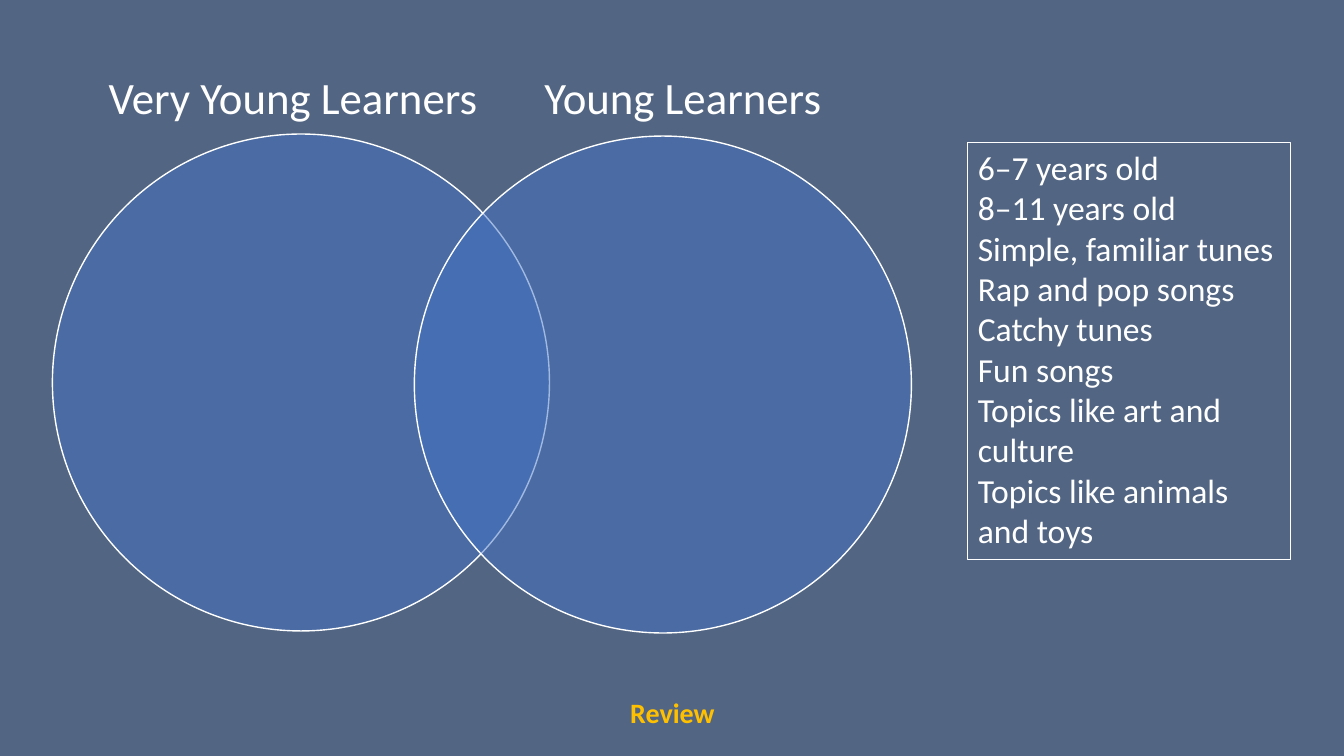
from lxml import etree
from pptx import Presentation
from pptx.dml.color import RGBColor
from pptx.enum.shapes import MSO_SHAPE
from pptx.enum.text import MSO_ANCHOR, PP_ALIGN
from pptx.oxml.ns import qn
from pptx.util import Inches, Pt

OVAL, LEFT = MSO_SHAPE.OVAL, PP_ALIGN.LEFT
TOP, MIDDLE = MSO_ANCHOR.TOP, MSO_ANCHOR.MIDDLE
SLATE = RGBColor(0x52, 0x65, 0x82)
BLUE = RGBColor(0x44, 0x72, 0xC4)
WHITE = RGBColor(0xFF, 0xFF, 0xFF)
GOLD = RGBColor(0xFF, 0xC0, 0x00)

# Content: places are left, top, width, height in inches
SECTION = ("Review", (6.15, 6.88, 1.13, 0.42))
LEARNER_GROUPS = [
    # heading, heading place, circle left and top
    ("Very Young Learners", (0.98, 0.64, 4.31, 0.64), (0.52, 1.33)),
    ("Young Learners", (5.3, 0.64, 3.11, 0.64), (4.11, 1.35)),
]
CIRCLE_SIZE = 4.93
FEATURES = [
    "6–7 years old",
    "8–11 years old",
    "Simple, familiar tunes",
    "Rap and pop songs",
    "Catchy tunes",
    "Fun songs",
    "Topics like art and culture",
    "Topics like animals and toys",
]
FEATURES_PLACE = (9.6, 1.41, 3.2, 4.14)

SECTION_FONT = {"name": "Calibri", "size": Pt(20), "bold": True}
HEADING_FONT = {"name": "Calibri", "size": Pt(32)}
FEATURE_FONT = {"name": "Calibri", "size": Pt(24)}


def inches(place):
    return [Inches(value) for value in place]


def write(box, lines, font_format, color, anchor=TOP, wrap=True, spacing=None):
    frame = box.text_frame
    frame.word_wrap = wrap
    frame.vertical_anchor = anchor
    frame.margin_left = frame.margin_right = Inches(0.1)
    frame.margin_top = frame.margin_bottom = Inches(0.05)
    frame.text = "\n".join(lines)
    for paragraph in frame.paragraphs:
        paragraph.alignment = LEFT
        paragraph.space_before = Pt(0)
        paragraph.line_spacing = spacing
        for key, value in font_format.items():
            setattr(paragraph.font, key, value)
        paragraph.font.color.rgb = color


def outline(shape, width):
    shape.line.color.rgb = WHITE
    shape.line.width = Pt(width)


deck = Presentation()
deck.slide_width, deck.slide_height = Inches(13.33), Inches(7.5)
slide = deck.slides.add_slide(deck.slide_layouts[5])
slide.background.fill.solid()
slide.background.fill.fore_color.rgb = SLATE

# Section label
section = slide.shapes.title
section.left, section.top, section.width, section.height = inches(SECTION[1])
write(section, [SECTION[0]], SECTION_FONT, GOLD, MIDDLE, wrap=False, spacing=0.9)

# Venn diagram: headings over half-transparent circles
for heading, heading_place, corner in LEARNER_GROUPS:
    label = slide.shapes.add_textbox(*inches(heading_place))
    write(label, [heading], HEADING_FONT, WHITE)

    circle = slide.shapes.add_shape(
        OVAL, *inches((*corner, CIRCLE_SIZE, CIRCLE_SIZE)))
    circle.shadow.inherit = False
    circle.fill.solid()
    circle.fill.fore_color.rgb = BLUE
    blue = circle.fill._xPr.find(qn("a:solidFill"))[0]
    etree.SubElement(blue, qn("a:alpha"), val="50000")
    outline(circle, 1)

# Features to sort into the circles
features = slide.shapes.add_textbox(*inches(FEATURES_PLACE))
outline(features, 0.75)
write(features, FEATURES, FEATURE_FONT, WHITE)

deck.save("out.pptx")
